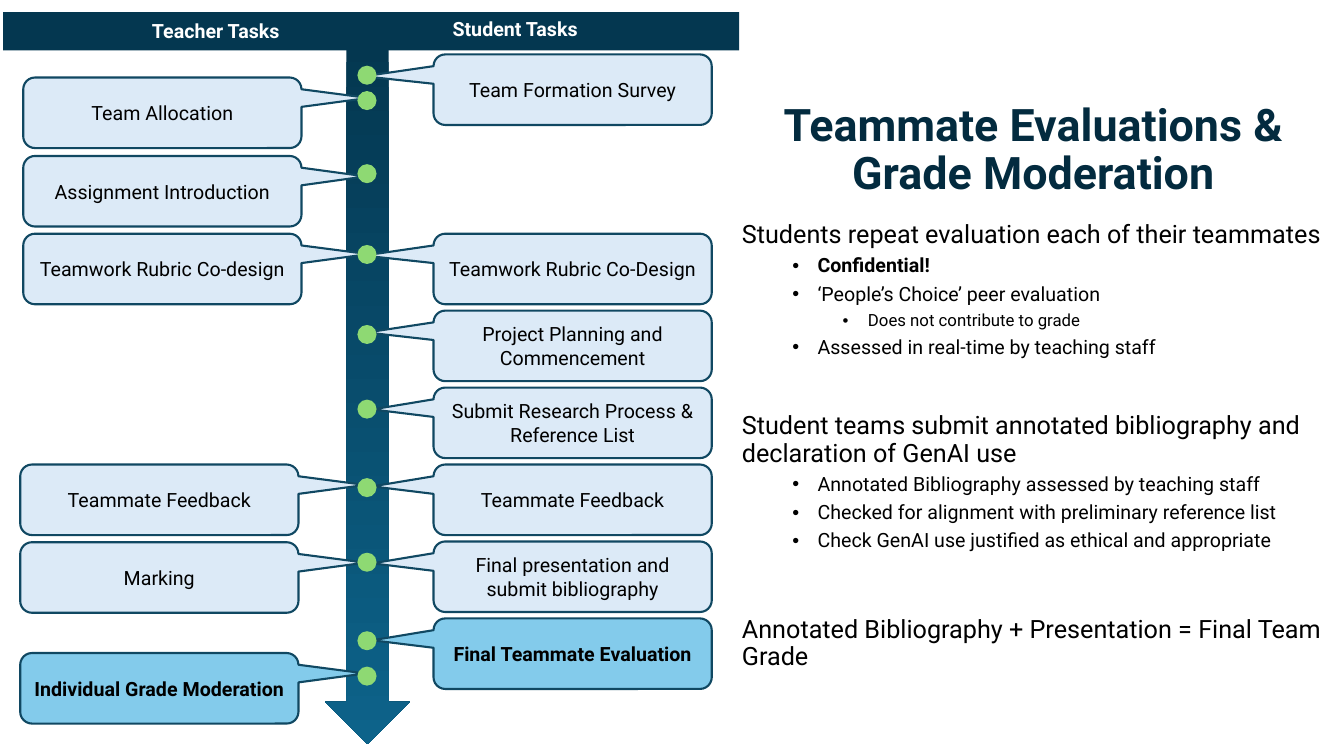
from lxml import etree
from pptx import Presentation
from pptx import util as u
from pptx.dml.color import RGBColor
from pptx.enum import shapes, text
from pptx.oxml import ns

NAVY = RGBColor(0x04, 0x37, 0x50)
TEAL = RGBColor(0x0D, 0x63, 0x8A)
EDGE = RGBColor(0x10, 0x48, 0x62)
PALE = RGBColor(0xDC, 0xEA, 0xF7)
SKY = RGBColor(0x83, 0xCB, 0xEB)
GREEN = RGBColor(0x8E, 0xD9, 0x73)
INK = RGBColor(0x03, 0x2B, 0x3F)
BLACK = RGBColor(0, 0, 0)
WHITE = RGBColor(0xFF, 0xFF, 0xFF)

KIND = shapes.MSO_SHAPE
MID = text.PP_ALIGN.CENTER
WIDE, HIGH = u.Inches(13.33), u.Inches(7.5)
LEFT_BOX = (0.23, 1.6, 54.76, 96.93)
RIGHT_BOX = (53.79, 13.2, 46.21, 86.8)

FIRST, PITCH = 5.78, 10.5
CARD_W, CARD_H = 37.81, 9.63
DOT_X, DOT_W = 49.45, 2.6

HEADS = [("Teacher Tasks", 16.16, 0.28), ("Student Tasks", 56.85, 0)]
TEACHER = [
    ("Team Allocation", 2.74, 0.3, 0.74),
    ("Assignment Introduction", 2.74, 1.32, 0.73),
    ("Teamwork Rubric Co-design", 2.74, 2.33, 0.74),
    ("Teammate Feedback", 2.33, 5.33, 0.74),
    ("Marking", 2.33, 6.34, 0.74),
    ("Individual Grade Moderation", 2.33, 7.78, 0.74),
]
STUDENT = [
    ("Team Formation Survey", 58.49, 0, -0.75),
    ("Teamwork Rubric Co-Design", 58.49, 2.33, -0.75),
    ("Project Planning and Commencement", 58.49, 3.33, -0.74),
    ("Submit Research Process & Reference List", 58.49, 4.33, -0.72),
    ("Teammate Feedback", 58.49, 5.33, -0.72),
    ("Final presentation and submit bibliography", 58.49, 6.33, -0.72),
    ("Final Teammate Evaluation", 58.49, 7.33, -0.72),
]
DOTS = [0.27, 0.6, 1.55, 2.6, 3.64, 4.61, 5.63, 6.6, 7.62, 8.08]

SIZES = [18, 14, 12]
GAPS = [10, 5, 5]
POINTS = [
    (0, "Students repeat evaluation each of their teammates", 0),
    (1, "Confidential!", 0),
    (1, "‘People’s Choice’ peer evaluation", 0),
    (2, "Does not contribute to grade", 0),
    (1, "Assessed in real-time by teaching staff", 0),
    (0, "Student teams submit annotated bibliography and declaration of GenAI use", 29),
    (1, "Annotated Bibliography assessed by teaching staff", 0),
    (1, "Checked for alignment with preliminary reference list", 0),
    (1, "Check GenAI use justified as ethical and appropriate", 0),
    (0, "Annotated Bibliography + Presentation = Final Team Grade", 36),
]


def place(box, x, y, w, h):
    """Turn percent shares of a box into slide lengths."""
    left, top, wide, high = box
    return (int(left + wide * x / 100), int(top + high * y / 100),
            int(wide * w / 100), int(high * h / 100))


def style(para, size, color, bold=False):
    """Format every run of a paragraph."""
    for run in para.runs:
        run.font.name = "Roboto"
        run.font.size = u.Pt(size)
        run.font.bold = bold
        run.font.color.rgb = color


def solid(slide, kind, area, color):
    """Add a plain filled shape without outline or shadow."""
    shape = slide.shapes.add_shape(kind, *area)
    shape.shadow.inherit = False
    shape.fill.solid()
    shape.fill.fore_color.rgb = color
    shape.line.fill.background()
    return shape


def label(slide, area, words, size, color):
    """Add a bold centred text box."""
    frame = slide.shapes.add_textbox(*area).text_frame
    frame.word_wrap = True
    frame.text = words
    para = frame.paragraphs[0]
    para.alignment = MID
    style(para, size, color, True)
    return frame


def card(slide, box, words, x, row, tip, last):
    """Add one task callout whose tip points at the arrow."""
    area = place(box, x, FIRST + row * PITCH, CARD_W, CARD_H)
    shape = solid(slide, KIND.ROUNDED_RECTANGULAR_CALLOUT, area, SKY if last else PALE)
    shape.adjustments[0] = tip
    shape.adjustments[1] = -0.21 if tip > 0 else -0.19
    shape.line.color.rgb = EDGE
    shape.line.width = u.Pt(1.5)
    frame = shape.text_frame
    frame.word_wrap = True
    frame.vertical_anchor = text.MSO_ANCHOR.MIDDLE
    frame.text = words
    frame.paragraphs[0].alignment = MID
    style(frame.paragraphs[0], 14, BLACK, last)


def timeline(slide, box):
    """Draw the header, arrow, task cards and dots."""
    arrow = solid(slide, KIND.DOWN_ARROW, place(box, 43.77, 3.51, 11.51, 96.42), NAVY)
    arrow.fill.gradient()
    arrow.fill.gradient_angle = 270
    for stop, color, at in zip(arrow.fill.gradient_stops, (NAVY, TEAL), (0, 1)):
        stop.color.rgb = color
        stop.position = at
    solid(slide, KIND.RECTANGLE, place(box, 0, 0, 100, 5.23), NAVY)
    for words, x, y in HEADS:
        label(slide, place(box, x, y, 25.48, 4.68), words, 14, WHITE)
    for tasks in (STUDENT, TEACHER):
        for task in tasks:
            card(slide, box, *task, task == tasks[-1])
    for row in DOTS:
        y = FIRST + row * PITCH - DOT_W / 2
        solid(slide, KIND.OVAL, place(box, DOT_X - DOT_W / 2, y, DOT_W, DOT_W), GREEN)


def bullet(para, level):
    """Give a paragraph a hanging round bullet."""
    props = para._p.get_or_add_pPr()
    props.set("marL", str(u.Inches(level * 0.5 + 0.25)))
    props.set("indent", str(u.Inches(-0.25)))
    etree.SubElement(props, ns.qn("a:buFont"), typeface="Arial")
    etree.SubElement(props, ns.qn("a:buChar"), char="•")


def notes(slide, box):
    """Write the heading and the points below it."""
    title = label(slide, place(box, 0, 0, 100, 15.51),
                  "Teammate Evaluations &\vGrade Moderation", 32, INK)
    title.vertical_anchor = text.MSO_ANCHOR.MIDDLE
    title.paragraphs[0].line_spacing = 0.9
    frame = slide.shapes.add_textbox(*place(box, 1.46, 17.82, 96.92, 82.18)).text_frame
    frame.word_wrap = True
    for i, (level, words, extra) in enumerate(POINTS):
        para = frame.add_paragraph() if i else frame.paragraphs[0]
        para.text = words
        para.level = level
        para.line_spacing = 0.9
        para.space_before = u.Pt(GAPS[level] + extra)
        style(para, SIZES[level], BLACK, words == "Confidential!")
        if level:
            bullet(para, level)


def main():
    """Build and save the slide."""
    deck = Presentation()
    deck.slide_width, deck.slide_height = WIDE, HIGH
    slide = deck.slides.add_slide(deck.slide_layouts[6])
    page = (0, 0, WIDE, HIGH)
    timeline(slide, place(page, *LEFT_BOX))
    notes(slide, place(page, *RIGHT_BOX))
    deck.save("out.pptx")


if __name__ == "__main__":
    main()
